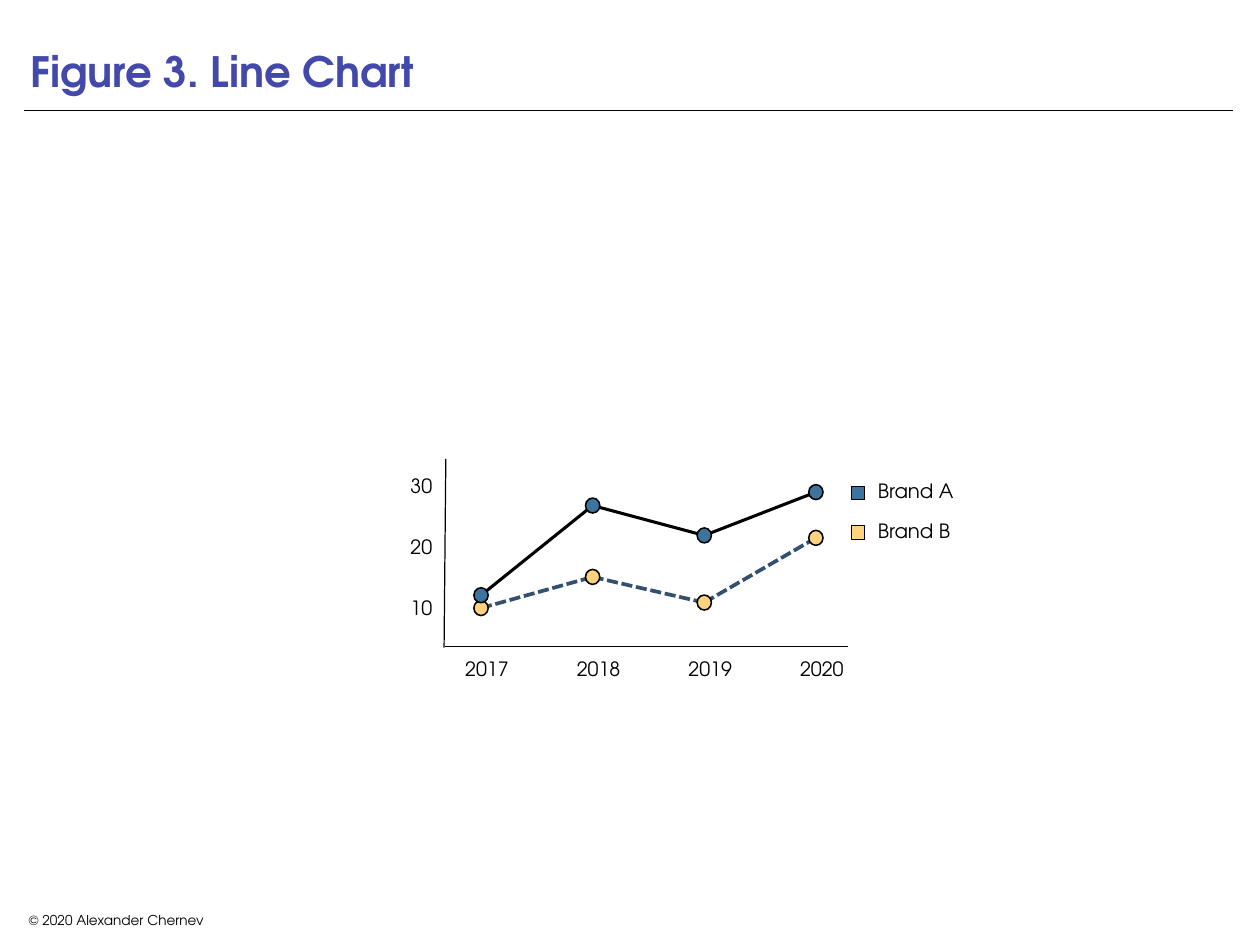
from dataclasses import dataclass

from lxml.etree import SubElement
from pptx import Presentation
from pptx.dml.color import RGBColor
from pptx.enum.dml import MSO_LINE
from pptx.enum.shapes import MSO_CONNECTOR, MSO_SHAPE
from pptx.enum.text import MSO_ANCHOR, PP_ALIGN
from pptx.oxml.ns import qn
from pptx.util import Cm, Pt


@dataclass(frozen=True)
class Theme:
    font: str = "TeX Gyre Adventor"
    title_color: RGBColor = RGBColor(0x43, 0x49, 0xAA)
    ink: RGBColor = RGBColor(0, 0, 0)
    blue: RGBColor = RGBColor(0x3D, 0x74, 0x9D)
    yellow: RGBColor = RGBColor(0xFF, 0xD3, 0x7D)
    dotted: RGBColor = RGBColor(0x33, 0x50, 0x6E)
    title_size: int = 34
    label_size: int = 16
    footer_size: int = 11


@dataclass(frozen=True)
class Series:
    name: str
    values: tuple
    marker_color: RGBColor
    line_color: RGBColor
    line_width: float
    dash: MSO_LINE


THEME = Theme()
YEARS = ("2017", "2018", "2019", "2020")
BRANDS = (
    Series("Brand A", (12, 26.7, 21.8, 28.9), THEME.blue, THEME.ink, 2.5, MSO_LINE.SOLID),
    Series("Brand B", (9.9, 15, 10.8, 21.4), THEME.yellow, THEME.dotted, 3, MSO_LINE.SQUARE_DOT),
)


# Chart scales, in centimetres
def year_x(index):
    return 13.79 + 3.2 * index


def value_y(value):
    return 19.17 - 0.175 * value


def style_text(frame, text, size, color, anchor, inset, align=PP_ALIGN.LEFT, bold=False):
    frame.text = text
    frame.vertical_anchor = anchor
    frame.margin_left = frame.margin_right = Cm(inset)
    frame.margin_top = frame.margin_bottom = Cm(inset)
    paragraph = frame.paragraphs[0]
    paragraph.alignment = align
    font = paragraph.runs[0].font
    font.name, font.size, font.bold = THEME.font, Pt(size), bold
    font.color.rgb = color


def add_title(slide, text):
    title = slide.shapes.title
    title.left, title.top, title.width, title.height = Cm(0.69), Cm(0), Cm(34.65), Cm(2.92)
    style_text(title.text_frame, text, THEME.title_size, THEME.title_color,
               MSO_ANCHOR.BOTTOM, 0.18, bold=True)


def add_label(slide, text, left, top, width, height, size=THEME.label_size,
              anchor=MSO_ANCHOR.MIDDLE, inset=0.15, align=PP_ALIGN.CENTER):
    label = slide.shapes.add_textbox(Cm(left), Cm(top), Cm(width), Cm(height))
    style_text(label.text_frame, text, size, THEME.ink, anchor, inset, align)
    return label


def add_line(slide, start, end, width, color=THEME.ink, dash=MSO_LINE.SOLID):
    line = slide.shapes.add_connector(
        MSO_CONNECTOR.STRAIGHT, *(Cm(length) for length in (*start, *end)))
    line.line.width = Pt(width)
    line.line.color.rgb = color
    line.line.dash_style = dash
    SubElement(line.element.spPr, qn("a:effectLst"))


def add_mark(slide, kind, center, width, height, color, outline):
    x, y = center
    mark = slide.shapes.add_shape(
        kind, Cm(x - width / 2), Cm(y - height / 2), Cm(width), Cm(height))
    mark.shadow.inherit = False
    mark.fill.solid()
    mark.fill.fore_color.rgb = color
    mark.line.color.rgb = THEME.ink
    mark.line.width = Pt(outline)


def add_axes(slide):
    add_line(slide, (12.73, 18.57), (12.78, 13.16), 1)
    add_line(slide, (12.75, 18.54), (24.31, 18.54), 1)
    for value in (10, 20, 30):
        add_label(slide, str(value), 11.53, value_y(value) - 0.46, 1.1, 0.92)
    for index, year in enumerate(YEARS):
        add_label(slide, year, year_x(index) - 0.68, 18.72, 1.7, 0.92)


def add_series(slide, brands):
    routes = [(brand, [(year_x(i), value_y(v)) for i, v in enumerate(brand.values)])
              for brand in brands]
    # Segments lie behind all markers
    for brand, points in routes:
        for start, end in zip(points, points[1:]):
            add_line(slide, start, end, brand.line_width, brand.line_color, brand.dash)
    for brand, points in routes:
        for point in points:
            add_mark(slide, MSO_SHAPE.OVAL, point, 0.41, 0.43, brand.marker_color, 1.25)


def add_legend(slide):
    for index, brand in enumerate(BRANDS):
        center_y = 14.14 + 1.13 * index
        add_mark(slide, MSO_SHAPE.RECTANGLE, (24.6, center_y), 0.38, 0.38,
                 brand.marker_color, 0.75)
        entry = add_label(slide, brand.name, 25.17, center_y - 0.5, 3.2, 1,
                          inset=0, align=PP_ALIGN.LEFT)
        entry.text_frame.word_wrap = True
        entry.text_frame.paragraphs[0].line_spacing = 0.8


def main():
    deck = Presentation()
    deck.slide_width, deck.slide_height = Cm(36.12), Cm(27.1)
    slide = deck.slides.add_slide(deck.slide_layouts[5])

    # Heading and footer
    add_title(slide, "Figure 3. Line Chart")
    add_line(slide, (0.69, 3.15), (35.36, 3.15), 0.5)
    footer = add_label(slide, "© 2020 Alexander Chernev", 0.64, 25.98, 8.81, 0.81,
                       THEME.footer_size, MSO_ANCHOR.BOTTOM, 0.18, PP_ALIGN.LEFT)
    footer.text_frame.word_wrap = True

    # Line chart, with Brand A in front of Brand B
    add_axes(slide)
    add_series(slide, BRANDS[::-1])
    add_legend(slide)

    deck.save("out.pptx")


if __name__ == "__main__":
    main()
